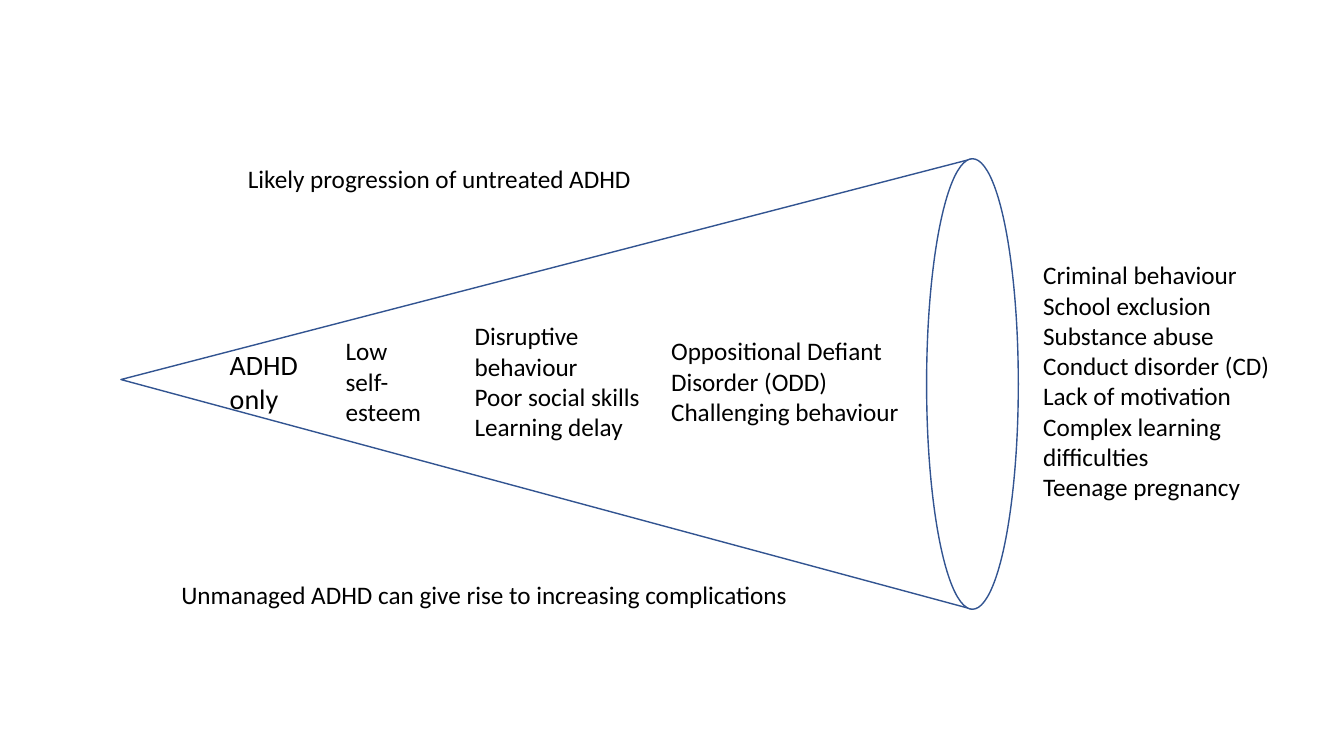
import pptx
import pptx.util
import pptx.dml.color
import pptx.enum.shapes
import pptx.enum.text

Pt = pptx.util.Pt
Shapes = pptx.enum.shapes.MSO_SHAPE

# Stages centred on one row: left, width, height, font size, paragraphs
STAGES = [
    (157, 66.2, 55.4, 20, ["ADHD only"]),
    (239.8, 74.9, 72.7, 18, ["Low self-esteem"]),
    (331.9, 156.2, 94.3, 18,
     ["Disruptive behaviour", "Poor social skills", "Learning delay"]),
    (472.3, 206.6, 72.7, 18,
     ["Oppositional Defiant Disorder (ODD)", "Challenging behaviour"]),
    (738, 202.3, 181.4, 18,
     ["Criminal behaviour", "School exclusion", "Substance abuse",
      "Conduct disorder (CD)", "Lack of motivation",
      "Complex learning difficulties", "Teenage pregnancy"]),
]
# Captions: left, top, width, text
CAPTIONS = [
    (122.4, 410.4, 475.9, "Unmanaged ADHD can give rise to increasing complications"),
    (169.9, 113, 295.9, "Likely progression of untreated ADHD"),
]
CAPTION_HEIGHT = 29
ROW_MIDDLE = 272.6

CONE_TIP, CONE_BASE = 86.4, 694.6
CONE_TOP, CONE_HEIGHT = 113.4, 321.8
MOUTH_WIDTH = 65.5


def color(hex_code):
    return pptx.dml.color.RGBColor.from_string(hex_code)


def add_outline(slide, kind, left, top, width, height):
    shape = slide.shapes.add_shape(kind, Pt(left), Pt(top), Pt(width), Pt(height))
    shape.shadow.inherit = False
    shape.fill.solid()
    shape.fill.fore_color.rgb = color("FFFFFF")
    shape.line.color.rgb = color("325491")
    shape.line.width = Pt(1)
    return shape


def add_text(slide, paragraphs, *, left, top, width, height, size=18,
             font="Calibri", font_color="000000"):
    box = slide.shapes.add_textbox(Pt(left), Pt(top), Pt(width), Pt(height))
    frame = box.text_frame
    frame.word_wrap = True
    frame.auto_size = pptx.enum.text.MSO_AUTO_SIZE.SHAPE_TO_FIT_TEXT
    frame.text = "\n".join(paragraphs)
    for paragraph in frame.paragraphs:
        for run in paragraph.runs:
            run.font.size = Pt(size)
            run.font.name = font
            run.font.color.rgb = color(font_color)


def add_cone(slide):
    """Draw a cone that lies on its side, with its tip to the left."""
    length = CONE_BASE - CONE_TIP
    center_x = (CONE_TIP + CONE_BASE) / 2
    center_y = CONE_TOP + CONE_HEIGHT / 2
    body = add_outline(slide, Shapes.ISOSCELES_TRIANGLE,
                       center_x - CONE_HEIGHT / 2, center_y - length / 2,
                       CONE_HEIGHT, length)
    body.rotation = 270
    body.adjustments[0] = 0.51
    add_outline(slide, Shapes.OVAL, CONE_BASE - MOUTH_WIDTH / 2, CONE_TOP,
                MOUTH_WIDTH, CONE_HEIGHT)


def main():
    presentation = pptx.Presentation()
    presentation.slide_width, presentation.slide_height = Pt(960), Pt(540)
    slide = presentation.slides.add_slide(presentation.slide_layouts[6])
    add_cone(slide)
    for left, width, height, size, paragraphs in STAGES:
        add_text(slide, paragraphs, left=left, top=ROW_MIDDLE - height / 2,
                 width=width, height=height, size=size)
    for left, top, width, caption in CAPTIONS:
        add_text(slide, [caption], left=left, top=top, width=width,
                 height=CAPTION_HEIGHT)
    presentation.save("out.pptx")


if __name__ == "__main__":
    main()
